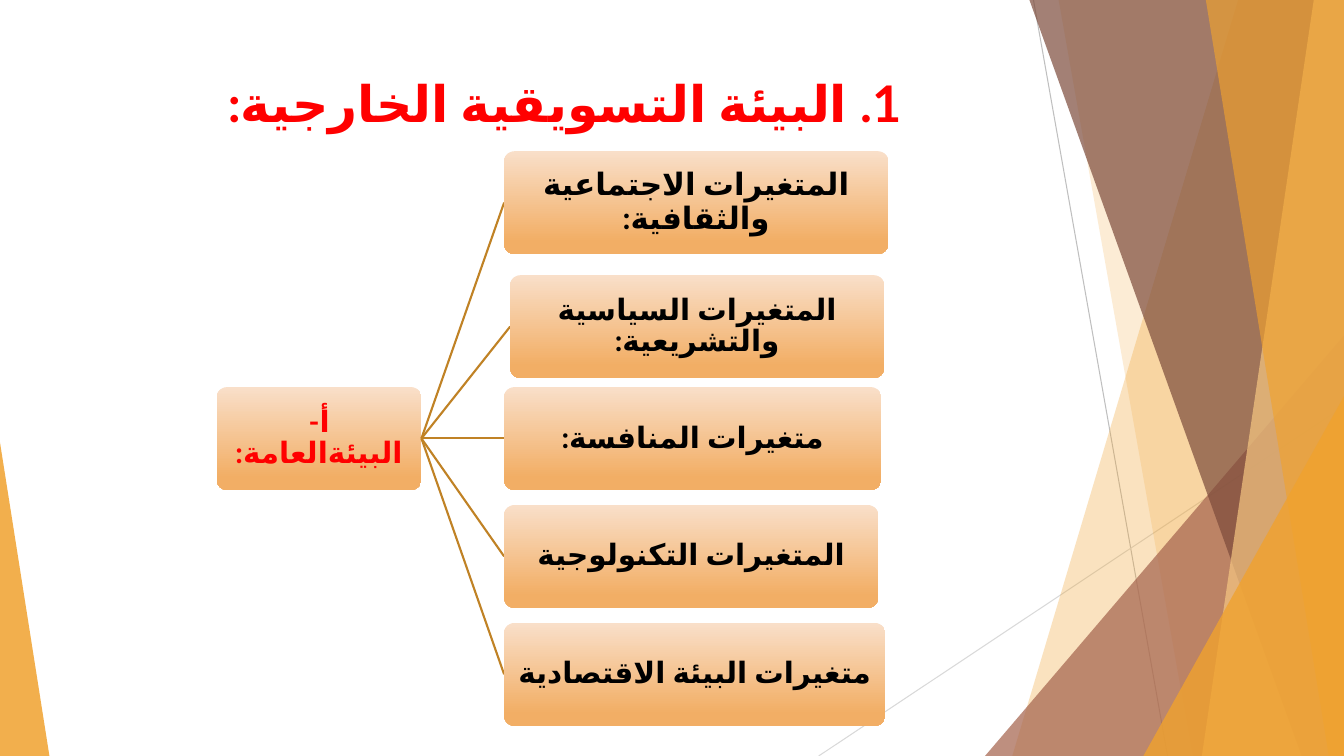
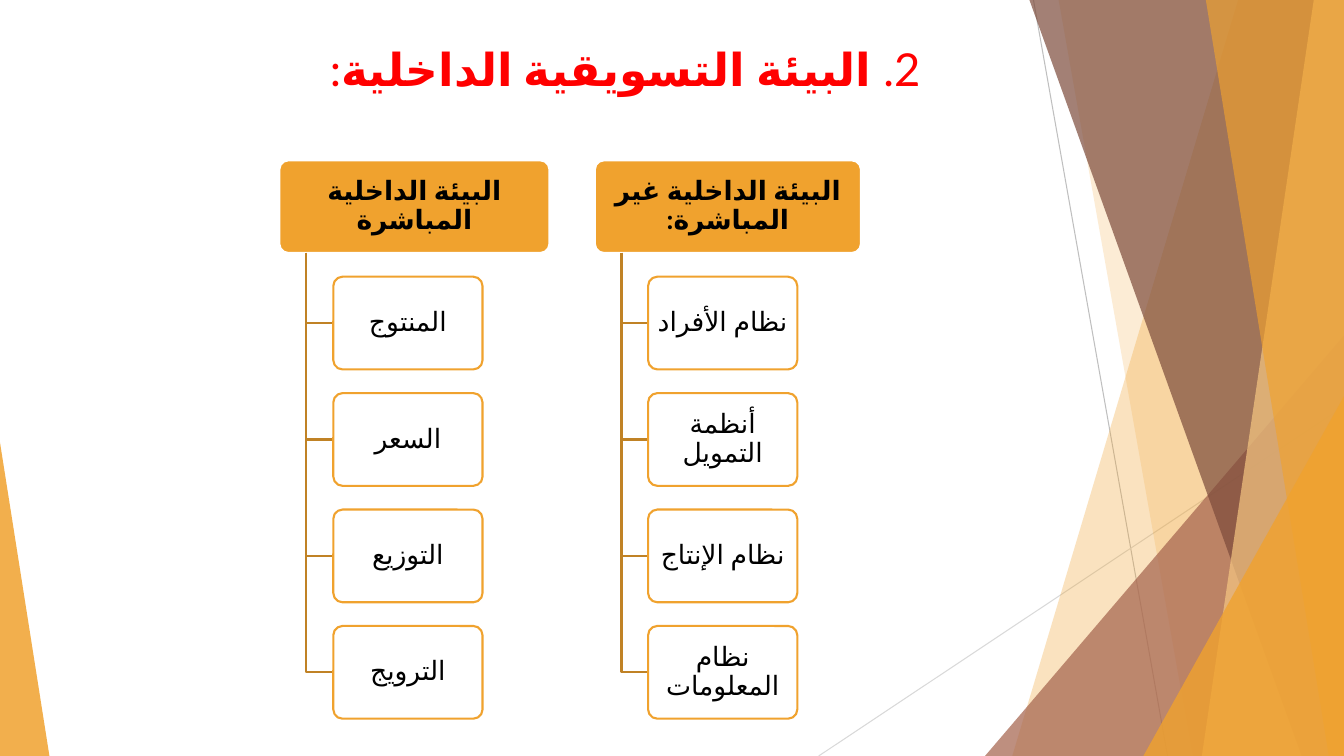
"""Build two slides on the external and internal marketing environment."""
from lxml.etree import SubElement
from pptx import Presentation
from pptx.dml.color import RGBColor
from pptx.enum.shapes import MSO_CONNECTOR, MSO_SHAPE
from pptx.enum.text import MSO_ANCHOR, PP_ALIGN
from pptx.oxml.ns import qn
from pptx.util import Inches, Pt

SLIDE_WIDTH, SLIDE_HEIGHT = 13.33, 7.5
RED, BLACK, WHITE = "FF0000", "000000", "FFFFFF"
AMBER, BRONZE = "F0A22E", "C08225"
GRADIENT = ((0, "F9DFC9"), (0.88, "F2AE65"))
COMPLEX_FONT, LANGUAGE = "Lato", "ar-DZ"

BACKDROP_LINES = (
    ((10.25, 0), (11.58, 7.5), "BFBFBF"),
    ((13.33, 4.03), (8.12, 7.5), "D9D9D9"),
)
BACKDROP_SHAPES = (
    ("band", (12.28, 10.04), AMBER, 30),
    ("band", (10.5, 11.83), AMBER, 20),
    ("triangle", (9.77, 3.33, 3.56, 1), "A5644E", 72),
    ("band", (10.21, 12.91), "7C4B3B", 70),
    ("band", (13.03, 11.92), "F6C782", 70),
    ("band", (11.96, 13.18), AMBER, 65),
    ("triangle", (11.34, 3.93, 1.99, 1), AMBER, 80),
    ("triangle", (0, 4.39, 0.49, 0), AMBER, 85),
)

EXTERNAL_HEIGHT = 1.02
ROOT_BOX = (2.15, 3.84, 2.03, EXTERNAL_HEIGHT)
EXTERNAL_VARIABLES = (
    ("المتغيرات الاجتماعية\nوالثقافية:", 5, 1.5, 3.81, 22, "Calibri"),
    ("المتغيرات السياسية\nوالتشريعية:", 5.06, 2.73, 3.71, 21, "Calibri"),
    ("متغيرات المنافسة:", 5, 3.84, 3.74, 21, "Arial"),
    ("المتغيرات التكنولوجية", 5, 5.01, 3.71, 21, "Arial"),
    ("متغيرات البيئة الاقتصادية", 5, 6.18, 3.78, 21, "Calibri"),
)

INTERNAL_TOP, INTERNAL_HEIGHT, CHILD_WIDTH = 1.59, 0.92, 1.48
INTERNAL_PITCH = (6.21 - INTERNAL_TOP) / 4
INTERNAL_BRANCHES = (
    ("البيئة الداخلية\nالمباشرة", 2.77, 2.68,
     ("المنتوج", "السعر", "التوزيع", "الترويج")),
    ("البيئة الداخلية غير\nالمباشرة:", 5.9, 2.64,
     ("نظام الأفراد", "أنظمة\nالتمويل", "نظام الإنتاج", "نظام\nالمعلومات")),
)


def color(value):
    """Turn a hex string into a colour."""
    return RGBColor.from_string(value)


def set_fill(shape, value, alpha=100):
    """Fill a shape with one colour at a given opacity in percent."""
    shape.fill.solid()
    shape.fill.fore_color.rgb = color(value)
    if alpha < 100:
        solid = shape._element.spPr.find(qn("a:solidFill"))
        SubElement(solid[0], qn("a:alpha"), val=str(alpha * 1000))


def set_gradient(shape):
    """Fill a shape with the vertical orange gradient."""
    shape.fill.gradient()
    shape.fill.gradient_angle = 270
    for stop, (position, value) in zip(shape.fill.gradient_stops, GRADIENT):
        stop.position = position
        stop.color.rgb = color(value)


def set_line(shape, value=None, width=1.5):
    """Give a shape an outline, or none when no colour is passed."""
    if value is None:
        shape.line.fill.background()
    else:
        shape.line.color.rgb = color(value)
        shape.line.width = Pt(width)


def add_run(paragraph, text, text_color, values):
    """Add an Arabic run with the given font values."""
    run = paragraph.add_run()
    run.text = text
    for name, value in values.items():
        setattr(run.font, name, value)
    run.font.color.rgb = color(text_color)
    properties = run._r.get_or_add_rPr()
    properties.set("lang", LANGUAGE)
    SubElement(properties, qn("a:cs"), typeface=COMPLEX_FONT)


def write_text(shape, runs, size, font_name="Lato", text_color=BLACK,
               anchor=MSO_ANCHOR.MIDDLE, line_spacing=0.9):
    """Write one centred right-to-left paragraph from (text, bold) runs."""
    shape.text_frame.word_wrap = True
    shape.text_frame.vertical_anchor = anchor
    paragraph = shape.text_frame.paragraphs[0]
    paragraph.alignment = PP_ALIGN.CENTER
    paragraph.line_spacing = line_spacing
    paragraph._p.get_or_add_pPr().set("rtl", "1")
    for text, bold in runs:
        values = {"size": Pt(size), "bold": bold, "name": font_name}
        for index, line in enumerate(text.split("\n")):
            if index:
                paragraph.add_line_break()
            add_run(paragraph, line, text_color, values)


def add_line(slide, start, end, value, width):
    """Draw a straight line between two points."""
    ends = [Inches(length) for length in (*start, *end)]
    connector = slide.shapes.add_connector(MSO_CONNECTOR.STRAIGHT, *ends)
    set_line(connector, value, width)
    SubElement(connector._element.spPr, qn("a:effectLst"))


def add_outline(slide, points, close):
    """Draw a freeform through the points."""
    start, *others = [(Inches(x), Inches(y)) for x, y in points]
    builder = slide.shapes.build_freeform(*start)
    builder.add_line_segments(others, close=close)
    shape = builder.convert_to_shape()
    shape.shadow.inherit = False
    return shape


def add_preset(slide, kind, box, adjustment):
    """Add a preset shape without shadow."""
    shape = slide.shapes.add_shape(kind, *[Inches(length) for length in box])
    shape.adjustments[0] = adjustment
    shape.shadow.inherit = False
    return shape


def add_band(slide, top_x, bottom_x):
    """Add a slanted band that reaches the right edge of the slide."""
    corners = ((top_x, 0), (SLIDE_WIDTH, 0),
               (SLIDE_WIDTH, SLIDE_HEIGHT), (bottom_x, SLIDE_HEIGHT))
    return add_outline(slide, corners, True)


def add_triangle(slide, left, top, width, apex):
    """Add a triangle that stands on the bottom edge of the slide."""
    box = (left, top, width, SLIDE_HEIGHT - top)
    return add_preset(slide, MSO_SHAPE.ISOSCELES_TRIANGLE, box, apex)


def add_backdrop(slide):
    """Draw the lines and translucent shapes that all slides share."""
    for start, end, value in BACKDROP_LINES:
        add_line(slide, start, end, value, 0.75)
    makers = {"band": add_band, "triangle": add_triangle}
    for kind, geometry, value, alpha in BACKDROP_SHAPES:
        shape = makers[kind](slide, *geometry)
        set_fill(shape, value, alpha)
        set_line(shape)


def add_title(slide, box, runs, size):
    """Add the red slide title."""
    title = slide.shapes.add_textbox(*[Inches(length) for length in box])
    write_text(title, runs, size, text_color=RED,
               anchor=MSO_ANCHOR.TOP, line_spacing=1.0)


def add_box(slide, box, inset):
    """Add a rounded box with equal text insets."""
    shape = add_preset(slide, MSO_SHAPE.ROUNDED_RECTANGLE, box, 0.1)
    for side in ("left", "right", "top", "bottom"):
        setattr(shape.text_frame, f"margin_{side}", Inches(inset))
    return shape


def add_gradient_box(slide, box, text, size, font_name, text_color=BLACK):
    """Add a gradient box with bold text."""
    shape = add_box(slide, box, 0.01)
    set_gradient(shape)
    set_line(shape)
    write_text(shape, [(text, True)], size, font_name, text_color)


def add_external_tree(slide):
    """Draw the root box and its fan of variables."""
    left, top, width, height = ROOT_BOX
    root_end = (left + width, top + height / 2)
    add_gradient_box(slide, ROOT_BOX, "أ-\nالبيئةالعامة:", 21, "Lato", RED)
    for text, left, top, width, size, font_name in EXTERNAL_VARIABLES:
        add_line(slide, root_end, (left, top + EXTERNAL_HEIGHT / 2), BRONZE, 1.5)
        box = (left, top, width, EXTERNAL_HEIGHT)
        add_gradient_box(slide, box, text, size, font_name)


def add_internal_box(slide, box, text, fill, alpha, outline, bold):
    """Add a header or child box of the hierarchy."""
    shape = add_box(slide, box, 0.03)
    set_fill(shape, fill, alpha)
    set_line(shape, outline)
    write_text(shape, [(text, bold)], 19)


def add_internal_branch(slide, header, left, width, children):
    """Draw a header with its children hanging from elbow lines."""
    box = (left, INTERNAL_TOP, width, INTERNAL_HEIGHT)
    add_internal_box(slide, box, header, AMBER, 100, WHITE, True)
    trunk_x, child_left = left + width * 0.1, left + width * 0.2
    for index, text in enumerate(children, start=1):
        top = INTERNAL_TOP + index * INTERNAL_PITCH
        middle = top + INTERNAL_HEIGHT / 2
        points = ((trunk_x, INTERNAL_TOP + INTERNAL_HEIGHT),
                  (trunk_x, middle), (child_left, middle))
        elbow = add_outline(slide, points, False)
        elbow.fill.background()
        set_line(elbow, BRONZE)
        box = (child_left, top, CHILD_WIDTH, INTERNAL_HEIGHT)
        add_internal_box(slide, box, text, WHITE, 90, AMBER, False)


def add_slide(presentation):
    """Add a blank slide with the shared backdrop."""
    slide = presentation.slides.add_slide(presentation.slide_layouts[6])
    add_backdrop(slide)
    return slide


def main():
    """Build and save the presentation."""
    presentation = Presentation()
    presentation.slide_width = Inches(SLIDE_WIDTH)
    presentation.slide_height = Inches(SLIDE_HEIGHT)

    external = add_slide(presentation)
    add_title(external, (0.78, 0.67, 9.64, 0.83),
              [("1. البيئة التسويقية الخارجية:", True)], 36)
    add_external_tree(external)

    internal = add_slide(presentation)
    add_title(internal, (0.34, 0.36, 11.72, 0.92),
              [("2. ", False), ("البيئة التسويقية الداخلية", True), (":", False)],
              32.4)
    for branch in INTERNAL_BRANCHES:
        add_internal_branch(internal, *branch)

    presentation.save("out.pptx")


if __name__ == "__main__":
    main()
